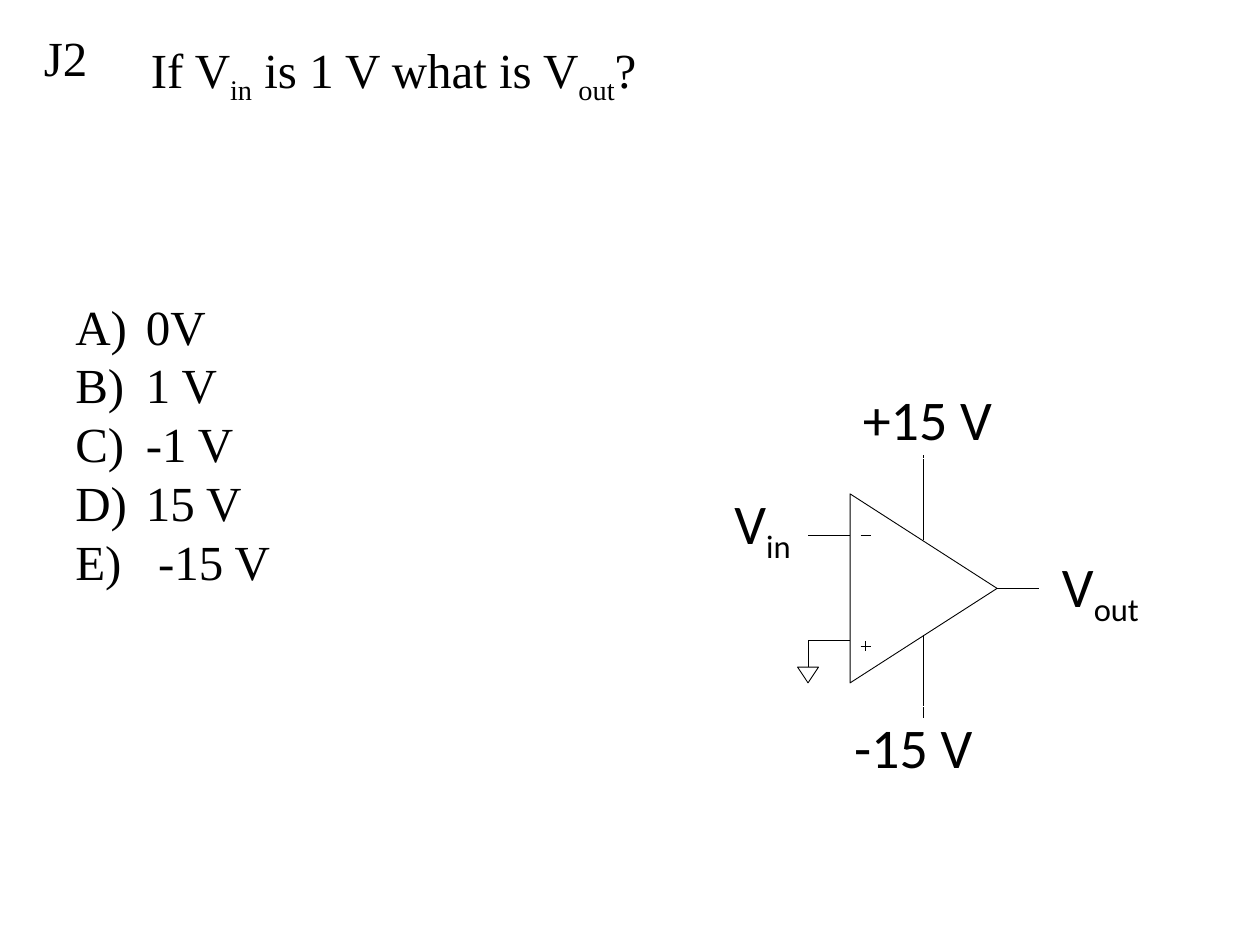
from lxml import etree
from pptx import Presentation
from pptx.dml.color import RGBColor
from pptx.enum.shapes import MSO_CONNECTOR, MSO_SHAPE
from pptx.enum.text import MSO_ANCHOR, MSO_AUTO_SIZE, PP_ALIGN
from pptx.oxml.ns import qn
from pptx.util import Inches, Pt

BLACK = RGBColor(0, 0, 0)
WHITE = RGBColor(255, 255, 255)
SERIF, SANS = "Times New Roman", "Calibri"
GRID = Inches(1) / 12  # circuit symbols sit on a twelfth-inch grid


def set_all(target, values):
    for attribute, value in values.items():
        setattr(target, attribute, value)


def write_runs(paragraph, parts, size=28, font=SERIF):
    """Write alternating normal and subscript parts."""
    paragraph.alignment = PP_ALIGN.LEFT
    for index, part in enumerate(parts):
        run = paragraph.add_run()
        run.text = part
        set_all(run.font, {"name": font, "size": Pt(size)})
        run.font.color.rgb = BLACK
        if index % 2:
            run.font._element.set("baseline", "-25000")


def place(shape, left, top, width, height):
    set_all(shape, {"left": left, "top": top, "width": width, "height": height})


def add_question(slide, left, top, width, height, parts):
    question = slide.shapes.title
    place(question, left, top, width, height)
    set_all(question.text_frame, {
        "word_wrap": True, "vertical_anchor": MSO_ANCHOR.TOP,
        "auto_size": MSO_AUTO_SIZE.SHAPE_TO_FIT_TEXT})
    write_runs(question.text_frame.paragraphs[0], parts)


def add_question_number(slide, left, top, width, height, number):
    frame = slide.shapes.add_textbox(left, top, width, height).text_frame
    set_all(frame, {"word_wrap": False,
                    "auto_size": MSO_AUTO_SIZE.SHAPE_TO_FIT_TEXT})
    write_runs(frame.paragraphs[0], [number])


def add_answers(slide, left, top, width, height, answers):
    frame = slide.shapes.add_textbox(left, top, width, height).text_frame
    set_all(frame, {"word_wrap": True, "margin_top": Inches(0.52)})
    indent = Inches(0.56)
    for index, answer in enumerate(answers):
        paragraph = frame.add_paragraph() if index else frame.paragraphs[0]
        write_runs(paragraph, [answer])
        properties = paragraph._p.get_or_add_pPr()
        properties.set("marL", str(indent))
        properties.set("indent", str(-indent))
        lettering = etree.SubElement(properties, qn("a:buAutoNum"))
        lettering.set("type", "alphaUcParenR")


def add_circuit(slide, left, top):
    """Draw an op-amp with its supplies and ground from the symbol's corner."""
    def point(x, y):
        return round(left + x * GRID), round(top + y * GRID)

    def add_wire(start, end, weight=0.5):
        wire = slide.shapes.add_connector(
            MSO_CONNECTOR.STRAIGHT, *point(*start), *point(*end))
        wire.line.color.rgb = BLACK
        wire.line.width = Pt(weight)
        etree.SubElement(wire._element.spPr, qn("a:effectLst"))

    def add_triangle(*corners):
        first, *others = [point(*corner) for corner in corners]
        builder = slide.shapes.build_freeform(*first)
        builder.add_line_segments(others, close=True)
        triangle = builder.convert_to_shape()
        triangle.shadow.inherit = False
        triangle.fill.background()
        triangle.line.color.rgb = BLACK
        triangle.line.width = Pt(0.5)

    def add_label(x, y, width, parts):
        label = slide.shapes.add_shape(
            MSO_SHAPE.RECTANGLE, left + Inches(x), top + Inches(y),
            Inches(width), Inches(0.64))
        label.shadow.inherit = False
        label.fill.background()
        label.line.color.rgb = WHITE
        label.line.width = Pt(0.75)
        set_all(label.text_frame, {
            "word_wrap": False, "vertical_anchor": MSO_ANCHOR.TOP,
            "auto_size": MSO_AUTO_SIZE.SHAPE_TO_FIT_TEXT})
        write_runs(label.text_frame.paragraphs[0], parts, 32, SANS)

    inputs_and_output = [((1, 4), (5, 4)), ((1, 14), (5, 14)), ((19, 9), (23, 9))]
    minus_sign = [((6, 4), (7, 4))]
    plus_sign = [((6.5, 14), (6.5, 15)), ((6, 14.5), (7, 14.5))]
    ground_lead = [((1, 14), (1, 16.5))]
    for ends in inputs_and_output + minus_sign + plus_sign + ground_lead:
        add_wire(*ends)
    add_triangle((19, 9), (5, 18), (5, 0))
    add_triangle((1, 18), (2, 16.5), (0, 16.5))
    for supply in [((12, 4.4), (12, -3.7)), ((12, 21.3), (12, 13.4))]:
        add_wire(*supply, weight=0.75)

    for label in [(-0.6, -0.09, 0.68, ["V", "in"]),
                  (2, 0.41, 0.85, ["V", "out"]),
                  (0.42, -0.92, 1.24, ["+15 V"]),
                  (0.35, 1.69, 1.15, ["-15 V"])]:
        add_label(*label)


def main():
    deck = Presentation()
    set_all(deck, {"slide_width": Inches(10), "slide_height": Inches(7.5)})
    slide = deck.slides.add_slide(deck.slide_layouts[5])
    add_question_number(slide, Inches(0.25), Inches(0.17),
                        Inches(0.55), Inches(0.57), "J2")
    add_question(slide, Inches(1), Inches(0.26), Inches(9), Inches(0.57),
                 [" If V", "in", " is 1 V what is V", "out", "?"])
    add_answers(slide, Inches(0.5), Inches(1.83), Inches(9), Inches(4.64),
                ["0V", "1 V", "-1 V", "15 V", " -15 V"])
    add_circuit(slide, Inches(6.33), Inches(3.92))
    deck.save("out.pptx")


if __name__ == "__main__":
    main()
